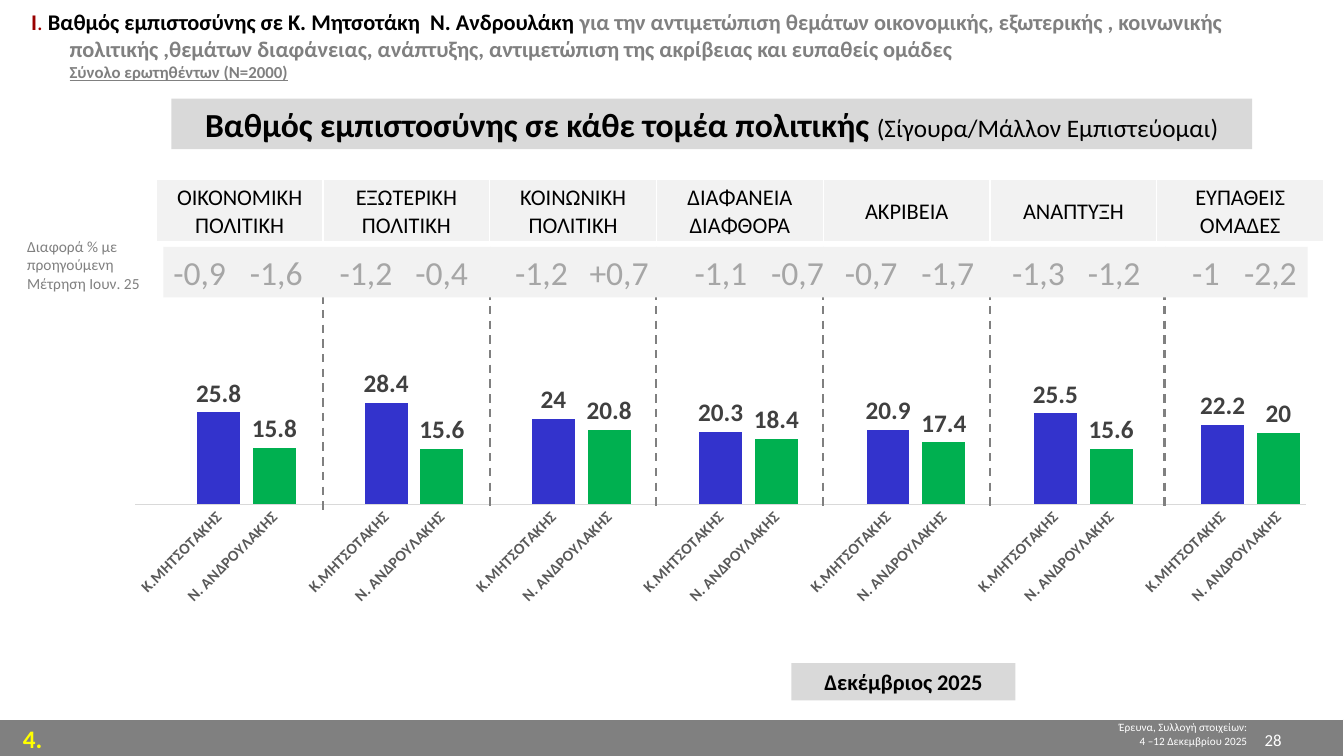
from lxml import etree
from pptx import Presentation
from pptx.chart.data import CategoryChartData
from pptx.dml.color import RGBColor
from pptx.enum.chart import XL_CHART_TYPE, XL_LABEL_POSITION, XL_TICK_MARK
from pptx.enum.dml import MSO_LINE
from pptx.enum.shapes import MSO_CONNECTOR, MSO_SHAPE
from pptx.enum.text import MSO_ANCHOR, MSO_AUTO_SIZE, PP_ALIGN
from pptx.oxml import parse_xml
from pptx.oxml.ns import nsdecls, qn
from pptx.util import Inches, Pt

LEFT, CENTER, RIGHT = PP_ALIGN.LEFT, PP_ALIGN.CENTER, PP_ALIGN.RIGHT
TOP, MIDDLE = MSO_ANCHOR.TOP, MSO_ANCHOR.MIDDLE
FONT = "Calibri"
BLACK, GRAY, WHITE, PALE, SILVER = "000000", "808080", "FFFFFF", "F2F2F2", "D9D9D9"
BLUE, GREEN = "3333CC", "00B050"

# Content: runs are (text, size, colour, bold)
TITLE = [
    ("Ι", 16, "990000", True),
    (".", 16, "990000", False),
    (" Βαθμός εμπιστοσύνης σε Κ. Μητσοτάκη  Ν. Ανδρουλάκη ", 16, BLACK, True),
    ("για την αντιμετώπιση θεμάτων οικονομικής, εξωτερικής , κοινωνικής πολιτικής ,"
     "θεμάτων διαφάνειας, ανάπτυξης, αντιμετώπιση της ακρίβειας και ευπαθείς ομάδες",
     16, GRAY, True),
]
SAMPLE = ("Σύνολο ερωτηθέντων (Ν=2000)", 12, GRAY, True)
HEADING = [("Βαθμός εμπιστοσύνης σε κάθε τομέα πολιτικής ", 24, BLACK, True),
           ("(Σίγουρα/Μάλλον Εμπιστεύομαι)", 18, BLACK, False)]
LEADERS = ["Κ.ΜΗΤΣΟΤΑΚΗΣ", "Ν. ΑΝΔΡΟΥΛΑΚΗΣ"]
# Policy area, trust in each leader, change from the previous wave
AREAS = [
    ("ΟΙΚΟΝΟΜΙΚΗ ΠΟΛΙΤΙΚΗ", (25.8, 15.8), ("-0,9", "-1,6")),
    ("ΕΞΩΤΕΡΙΚΗ ΠΟΛΙΤΙΚΗ", (28.4, 15.6), ("-1,2", "-0,4")),
    ("ΚΟΙΝΩΝΙΚΗ ΠΟΛΙΤΙΚΗ", (24, 20.8), ("-1,2", "+0,7")),
    ("ΔΙΑΦΑΝΕΙΑ ΔΙΑΦΘΟΡΑ", (20.3, 18.4), ("-1,1", "-0,7")),
    ("ΑΚΡΙΒΕΙΑ", (20.9, 17.4), ("-0,7", "-1,7")),
    ("ΑΝΑΠΤΥΞΗ", (25.5, 15.6), ("-1,3", "-1,2")),
    ("ΕΥΠΑΘΕΙΣ ΟΜΑΔΕΣ", (22.2, 20), ("-1", "-2,2")),
]
CHANGE_CENTERS = [1.98, 2.74, 3.63, 4.38, 5.37, 6.14, 7.15,
                  7.91, 8.64, 9.4, 10.3, 11.05, 11.96, 12.6]
DIVIDERS = [(3.2, 2.49), (4.86, 2.45), (6.51, 2.45),
            (8.16, 2.45), (9.82, 2.45), (11.55, 2.45)]
DIVIDER_LENGTH = 2.6
BAND_LEFT = 1.62


def color(value):
    return RGBColor.from_string(value)


def style(font, size, fill, bold=False):
    font.name, font.size, font.bold = FONT, Pt(size), bold
    font.color.rgb = color(fill)


def add_span(para, text, size, fill, bold):
    span = para.add_run()
    span.text = text
    style(span.font, size, fill, bold)
    return span


def write(box, paragraphs, align=LEFT, anchor=TOP):
    frame = box.text_frame
    frame.word_wrap, frame.vertical_anchor = True, anchor
    for index, spans in enumerate(paragraphs):
        para = frame.add_paragraph() if index else frame.paragraphs[0]
        para.alignment = align
        for span in spans:
            add_span(para, *span)


def add_box(place, paragraphs, align=LEFT):
    box = slide.shapes.add_textbox(*map(Inches, place))
    write(box, paragraphs, align)


def add_panel(place, fill, paragraphs=(), align=CENTER):
    panel = slide.shapes.add_shape(MSO_SHAPE.RECTANGLE, *map(Inches, place))
    panel.shadow.inherit = False
    panel.fill.solid()
    panel.fill.fore_color.rgb = color(fill)
    panel.line.fill.background()
    write(panel, paragraphs, align, MIDDLE)
    return panel


deck = Presentation()
deck.slide_width, deck.slide_height = Inches(13.33), Inches(7.5)
slide = deck.slides.add_slide(deck.slide_layouts[5])

# Footer
footer = add_panel((0, 7.14, 13.33, 0.37), GRAY)
footer.line.color.rgb = color(WHITE)
footer.line.width = Pt(0.75)
add_box((0.13, 7.13, 0.67, 0.4), [[("4.", 18, "FFFF00", True)]])
add_box((9.58, 7.1, 2.89, 0.37),
        [[("Έρευνα, Συλλογή στοιχείων:", 8, WHITE, False)],
         [("4 –12 Δεκεμβρίου 2025", 8, WHITE, False)]], RIGHT)

# Title
title = slide.shapes.title
title.left, title.top, title.width, title.height = map(Inches, (0.21, 0.03, 12.05, 1.25))
title.text_frame.auto_size = MSO_AUTO_SIZE.NONE
write(title, [TITLE])
title_para = title.text_frame.paragraphs[0]
title_para.add_line_break()
add_span(title_para, *SAMPLE).font.underline = True
hanging = title_para._p.get_or_add_pPr()
hanging.set("marL", str(Inches(0.38)))
hanging.set("indent", str(-Inches(0.38)))

# Chart: an empty slot precedes each pair of bars
chart_data = CategoryChartData()
chart_data.categories = ["", *LEADERS] * len(AREAS)
chart_data.add_series("Series 1", [value for _, pair, _ in AREAS for value in (None, *pair)])
chart = slide.shapes.add_chart(XL_CHART_TYPE.COLUMN_CLUSTERED, *map(
    Inches, (0.37, 0.76, 12.6, 6.15)), chart_data).chart
chart.has_legend = chart.has_title = False
chart.font.name, chart.font.size = "Roboto", Pt(10)
chart.font.color.rgb = color(BLACK)

value_axis = chart.value_axis
value_axis.minimum_scale, value_axis.maximum_scale = 0, 100
value_axis.major_unit = 20
value_axis.has_major_gridlines = value_axis.visible = False
category_axis = chart.category_axis
category_axis.major_tick_mark = XL_TICK_MARK.NONE
category_axis.format.line.color.rgb = color(SILVER)
category_axis.format.line.width = Pt(0.75)
style(category_axis.tick_labels.font, 11, "595959", True)
category_axis._element.find(qn("c:txPr")).find(qn("a:bodyPr")).set("rot", "-2700000")

plot = chart.plots[0]
plot.gap_width, plot.vary_by_categories = 30, False
bars = plot.series[0]
bars.format.fill.solid()
bars.format.fill.fore_color.rgb = color(BLUE)
for area in range(len(AREAS)):
    second_bar = bars.points[3 * area + 2].format.fill
    second_bar.solid()
    second_bar.fore_color.rgb = color(GREEN)
labels = bars.data_labels
labels.show_value, labels.position = True, XL_LABEL_POSITION.OUTSIDE_END
style(labels.font, 18, "404040", True)

plot_area = chart._chartSpace.chart.plotArea
for layout in plot_area.findall(qn("c:layout")):
    plot_area.remove(layout)
settings = [("layoutTarget", "inner"), ("xMode", "edge"), ("yMode", "edge"),
            ("x", 0.077), ("y", 0.116), ("w", 0.922), ("h", 0.574)]
plot_area.insert(0, parse_xml(
    f'<c:layout {nsdecls("c")}><c:manualLayout>'
    + "".join(f'<c:{key} val="{value}"/>' for key, value in settings)
    + "</c:manualLayout></c:layout>"))

# Dashed dividers
for x, y in DIVIDERS:
    divider = slide.shapes.add_connector(
        MSO_CONNECTOR.STRAIGHT, *map(Inches, (x, y, x, y + DIVIDER_LENGTH)))
    divider.line.color.rgb = color(GRAY)
    divider.line.width, divider.line.dash_style = Pt(1.5), MSO_LINE.DASH
    etree.SubElement(divider._element.spPr, qn("a:effectLst"))

# Policy areas
table = slide.shapes.add_table(1, len(AREAS), *map(Inches, (1.55, 1.78, 11.58, 0.63))).table
table.first_row = table.horz_banding = False
for cell, (name, _, _) in zip(table.rows[0].cells, AREAS):
    cell.text = name
    cell.vertical_anchor = MIDDLE
    cell_para = cell.text_frame.paragraphs[0]
    cell_para.alignment = CENTER
    style(cell_para.runs[0].font, 16, BLACK)
    for side, width in (("L", 1), ("R", 1), ("T", 1), ("B", 3)):
        cell._tc.get_or_add_tcPr().append(parse_xml(
            f'<a:ln{side} {nsdecls("a")} w="{Pt(width)}"><a:solidFill>'
            f'<a:srgbClr val="{WHITE}"/></a:solidFill></a:ln{side}>'))
    cell.fill.solid()
    cell.fill.fore_color.rgb = color(PALE)

# Heading and date
add_panel((1.7, 0.98, 10.72, 0.5), SILVER, [HEADING])
add_panel((7.85, 6.58, 2.22, 0.37), SILVER, [[("Δεκέμβριος 2025", 16, BLACK, True)]])

# Changes, each centred on its own tab stop
changes = "".join("\t" + change for _, _, pair in AREAS for change in pair)
band = add_panel((BAND_LEFT, 2.45, 11.35, 0.5), PALE,
                 [[(changes, 24, "A6A6A6", False)]], LEFT)
band.text_frame.margin_left = band.text_frame.margin_right = 0
tabs = etree.SubElement(band.text_frame.paragraphs[0]._p.get_or_add_pPr(), qn("a:tabLst"))
for center in CHANGE_CENTERS:
    etree.SubElement(tabs, qn("a:tab"), pos=str(Inches(center - BAND_LEFT)), algn="ctr")

# Side note and page number
add_box((0.17, 2.3, 1.65, 0.66),
        [[("Διαφορά % με προηγούμενη", 11, GRAY, False)],
         [("Μέτρηση Ιουν. 25", 11, GRAY, False)]])
add_box((10.03, 7.19, 2.78, 0.5), [[("28", 12, WHITE, False)]], RIGHT)

deck.save("out.pptx")
